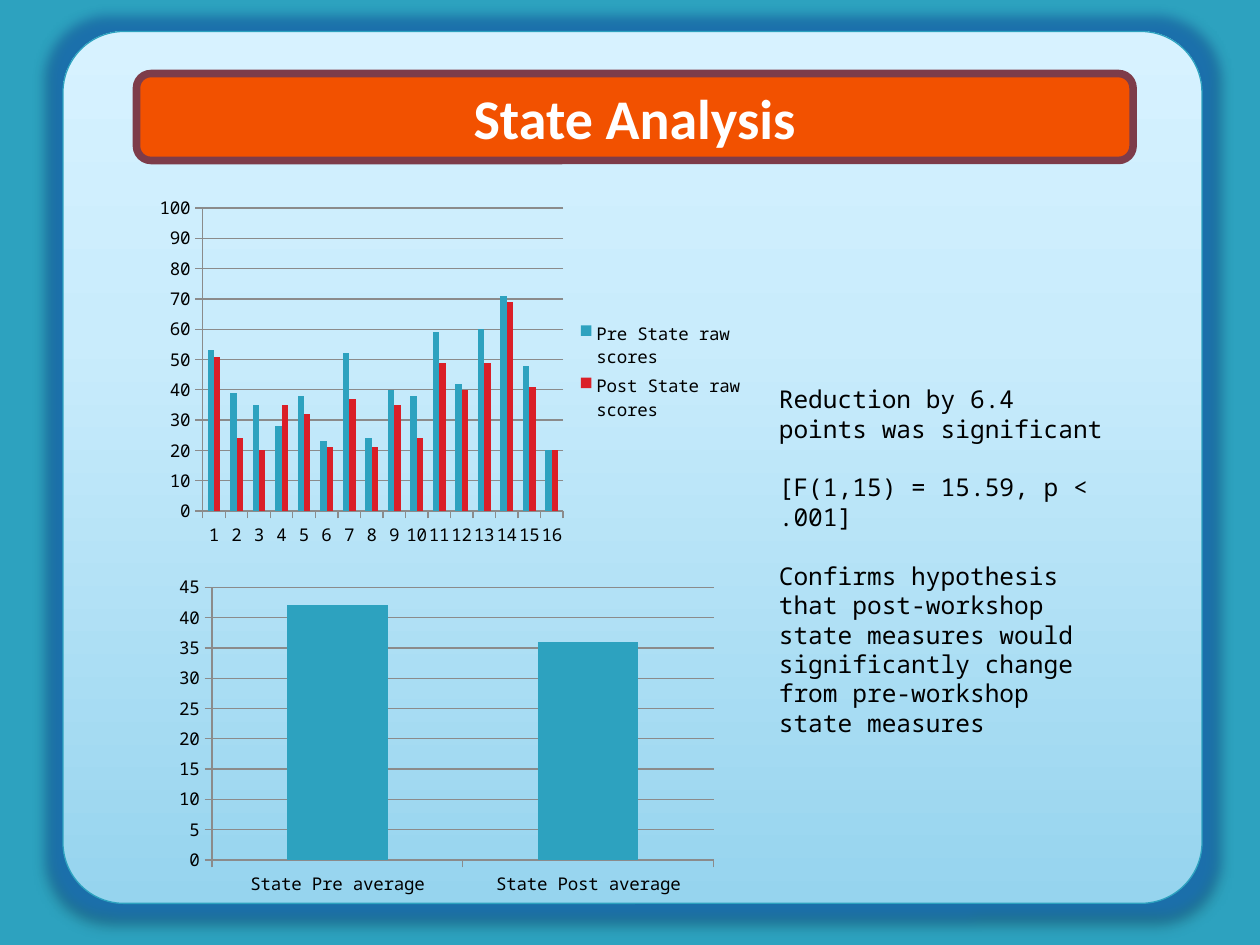
from dataclasses import dataclass
from typing import Optional

import pptx
import pptx.chart.data
import pptx.dml.color
import pptx.enum.chart
import pptx.enum.shapes
import pptx.enum.text
import pptx.oxml
import pptx.oxml.ns
import pptx.util

WIDE, HIGH = 10, 7.5
MONO = "Noto Sans Mono"
TEAL, RED, GREY, BLACK = "2DA2BF", "DA1F28", "8B8B8B", "000000"
NS = pptx.oxml.ns.nsdecls("a")


@dataclass
class Box:
    """A place on the slide, in percent of its width and height."""
    left: float
    top: float
    wide: float
    high: float

    def emu(self) -> list:
        pairs = ((self.left, WIDE), (self.top, HIGH),
                 (self.wide, WIDE), (self.high, HIGH))
        return [pptx.util.Inches(part * full / 100) for part, full in pairs]


@dataclass
class Series:
    name: str
    vals: tuple
    color: str


@dataclass
class Plot:
    box: Box
    cats: list
    series: list
    top: float
    step: float
    legend: bool = False


PLOTS = [
    Plot(Box(11.7, 20, 48.3, 38.67), [str(n) for n in range(1, 17)], [
        Series("Pre State raw scores",
               (53, 39, 35, 28, 38, 23, 52, 24, 40, 38, 59, 42, 60, 71, 48, 20), TEAL),
        Series("Post State raw scores",
               (51, 24, 20, 35, 32, 21, 37, 21, 35, 24, 49, 40, 49, 69, 41, 20), RED),
    ], 100, 10, True),
    Plot(Box(13.33, 60.2, 44.2, 35.33), ["State Pre average", "State Post average"],
         [Series("Series 1", (42, 36), TEAL)], 45, 5),
]
NOTES = [
    "Reduction by 6.4 points was significant",
    "[F(1,15) = 15.59, p < .001]",
    "Confirms hypothesis that post-workshop state measures would "
    "significantly change from pre-workshop state measures",
]


def rgb(code: str):
    return pptx.dml.color.RGBColor.from_string(code)


def paint(fill, code: str) -> None:
    fill.solid()
    fill.fore_color.rgb = rgb(code)


def edge(line, code: str, width: float) -> None:
    line.color.rgb = rgb(code)
    line.width = pptx.util.Pt(width)


def style(font, face: str = MONO, size: float = 14, color: str = BLACK,
          bold: bool = False) -> None:
    font.name, font.size, font.bold = face, pptx.util.Pt(size), bold
    font.color.rgb = rgb(color)


def write(frame, paras: list, align: Optional[int] = None, gap: float = 0,
          **look) -> None:
    frame.word_wrap = True
    for num, text in enumerate(paras):
        para = frame.add_paragraph() if num else frame.paragraphs[0]
        para.alignment = align
        if num and gap:
            para.space_before = pptx.util.Pt(gap)
        run = para.add_run()
        run.text = text
        style(run.font, **look)


def add_round(slide, box: Box, color: str, width: float):
    shape = slide.shapes.add_shape(
        pptx.enum.shapes.MSO_SHAPE.ROUNDED_RECTANGLE, *box.emu())
    edge(shape.line, color, width)
    return shape


def add_panel(slide, box: Box) -> None:
    panel = add_round(slide, box, TEAL, 0.75)
    panel.adjustments[0] = 0.07
    stops = "".join(
        f'<a:gs pos="{pos * 1000}"><a:srgbClr val="{code}"/></a:gs>'
        for pos, code in ((0, "96D4EE"), (65, "C9ECFC"), (100, "D7F2FF")))
    props = panel._element.spPr
    props.insert(2, pptx.oxml.parse_xml(
        f'<a:gradFill {NS} rotWithShape="1"><a:gsLst>{stops}</a:gsLst>'
        '<a:lin ang="16200000" scaled="0"/></a:gradFill>'))
    props.append(pptx.oxml.parse_xml(
        f'<a:effectLst {NS}><a:glow rad="200000"><a:srgbClr val="1B70B0">'
        '<a:alpha val="90000"/></a:srgbClr></a:glow>'
        '<a:outerShdw blurRad="50800" dist="38100" dir="5400000" rotWithShape="0">'
        '<a:srgbClr val="000000"><a:alpha val="35000"/></a:srgbClr>'
        '</a:outerShdw></a:effectLst>'))


def add_title(slide, box: Box, text: str) -> None:
    plate = add_round(slide, box, "7D3C4A", 4.33)
    plate.shadow.inherit = False
    paint(plate.fill, "F25100")
    title = slide.shapes.title
    title.left, title.top, title.width, title.height = box.emu()
    frame = title.text_frame
    frame.auto_size = pptx.enum.text.MSO_AUTO_SIZE.NONE
    frame.vertical_anchor = pptx.enum.text.MSO_ANCHOR.MIDDLE
    write(frame, [text], align=pptx.enum.text.PP_ALIGN.CENTER,
          face="Calibri", size=32, color="FFFFFF", bold=True)
    # The placeholder comes first in the tree; lift it above its plate.
    slide.shapes._spTree.append(title._element)


def add_plot(slide, plot: Plot) -> None:
    data = pptx.chart.data.CategoryChartData()
    data.categories = plot.cats
    for item in plot.series:
        data.add_series(item.name, item.vals)
    chart = slide.shapes.add_chart(
        pptx.enum.chart.XL_CHART_TYPE.COLUMN_CLUSTERED, *plot.box.emu(), data).chart
    style(chart.font, size=10)
    chart.has_title = False
    chart.has_legend = plot.legend
    if plot.legend:
        chart.legend.position = pptx.enum.chart.XL_LEGEND_POSITION.RIGHT
        chart.legend.include_in_layout = False
    bars = chart.plots[0]
    bars.vary_by_categories = False
    bars.gap_width = 150
    for item, bar in zip(plot.series, bars.series):
        paint(bar.format.fill, item.color)
    vals = chart.value_axis
    vals.minimum_scale, vals.maximum_scale, vals.major_unit = 0, plot.top, plot.step
    vals.has_major_gridlines = True
    edge(vals.major_gridlines.format.line, GREY, 0.75)
    for axis in (chart.category_axis, vals):
        axis.major_tick_mark = pptx.enum.chart.XL_TICK_MARK.OUTSIDE
        edge(axis.format.line, GREY, 0.75)


def add_notes(slide, box: Box) -> None:
    frame = slide.shapes.add_textbox(*box.emu()).text_frame
    write(frame, NOTES, gap=16.8)
    frame.auto_size = pptx.enum.text.MSO_AUTO_SIZE.SHAPE_TO_FIT_TEXT


def main() -> None:
    deck = pptx.Presentation()
    deck.slide_width = pptx.util.Inches(WIDE)
    deck.slide_height = pptx.util.Inches(HIGH)
    slide = deck.slides.add_slide(deck.slide_layouts[5])
    paint(slide.background.fill, TEAL)
    add_panel(slide, Box(5, 3.33, 90.4, 92.27))
    add_title(slide, Box(10.83, 7.78, 79.1, 9.2), "State Analysis")
    for plot in PLOTS:
        add_plot(slide, plot)
    add_notes(slide, Box(60.83, 40, 28.3, 35.87))
    deck.save("out.pptx")


if __name__ == "__main__":
    main()
